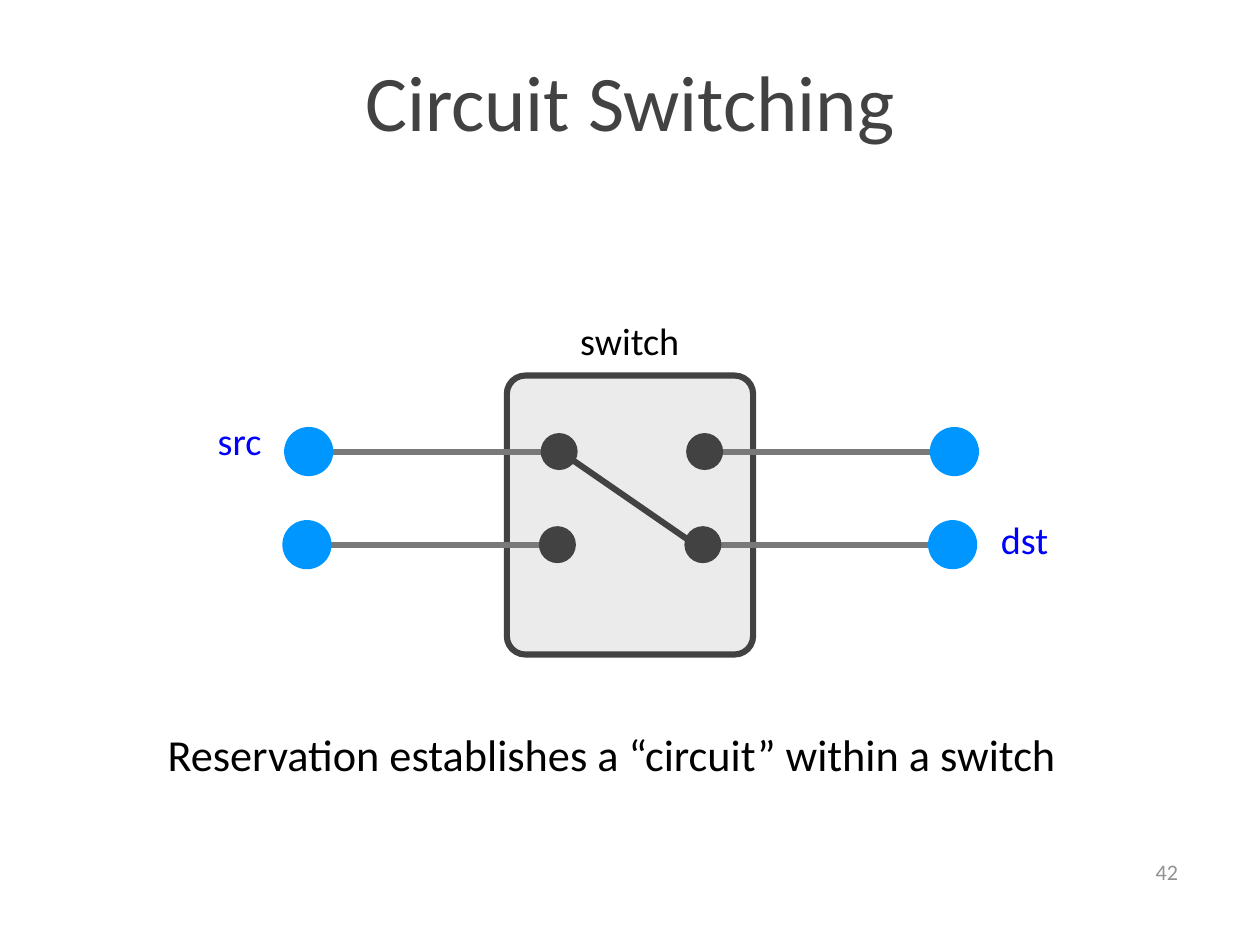
from lxml import etree
from pptx import Presentation
from pptx.dml.color import RGBColor
from pptx.enum.shapes import MSO_CONNECTOR, MSO_SHAPE
from pptx.enum.text import MSO_ANCHOR, PP_ALIGN
from pptx.oxml.ns import qn
from pptx.util import Cm, Pt

STRAIGHT = MSO_CONNECTOR.STRAIGHT
OVAL, ROUND_RECT = MSO_SHAPE.OVAL, MSO_SHAPE.ROUNDED_RECTANGLE
TOP, MIDDLE = MSO_ANCHOR.TOP, MSO_ANCHOR.MIDDLE
CENTER = PP_ALIGN.CENTER

BLACK = RGBColor(0x00, 0x00, 0x00)
DARK = RGBColor(0x42, 0x42, 0x42)
WIRE_GRAY = RGBColor(0x79, 0x79, 0x79)
NUMBER_GRAY = RGBColor(0x91, 0x91, 0x91)
PANEL_GRAY = RGBColor(0xEB, 0xEB, 0xEB)
HOST_BLUE = RGBColor(0x00, 0x96, 0xFF)
LABEL_BLUE = RGBColor(0x00, 0x00, 0xFF)

FONT = "Calibri"
LINE_WIDTH = Pt(5)
HOST_SIZE, PORT_SIZE = 1.41, 1.06
HOST_XS = (8.85, 27.36)
PORT_XS = (16.03, 20.2)
ROWS = ((0, 12.95), (-0.05, 15.62))  # x shift, centre y


def add_text(s, text, x, y, w, h, size, color=BLACK, anchor=MIDDLE, margin=0.15, wrap=False):
    tf = s.shapes.add_textbox(Cm(x), Cm(y), Cm(w), Cm(h)).text_frame
    tf.word_wrap = wrap
    tf.vertical_anchor = anchor
    tf.margin_left = tf.margin_right = tf.margin_top = tf.margin_bottom = Cm(margin)
    p = tf.paragraphs[0]
    p.alignment = CENTER
    r = p.add_run()
    r.text = text
    r.font.name, r.font.size = FONT, Pt(size)
    r.font.color.rgb = color


def add_line(s, x1, y1, x2, y2, color):
    c = s.shapes.add_connector(STRAIGHT, Cm(x1), Cm(y1), Cm(x2), Cm(y2))
    c.line.color.rgb = color
    c.line.width = LINE_WIDTH
    etree.SubElement(c._element.spPr, qn("a:effectLst"))


def add_dot(s, cx, cy, size, color):
    sp = s.shapes.add_shape(OVAL, Cm(cx - size / 2), Cm(cy - size / 2), Cm(size), Cm(size))
    sp.shadow.inherit = False
    sp.fill.solid()
    sp.fill.fore_color.rgb = color
    sp.line.fill.background()


def add_switch_box(s):
    sp = s.shapes.add_shape(ROUND_RECT, Cm(14.53), Cm(10.77), Cm(7.06), Cm(8))
    sp.adjustments[0] = 0.075
    sp.shadow.inherit = False
    sp.fill.solid()
    sp.fill.fore_color.rgb = PANEL_GRAY
    sp.line.color.rgb = DARK
    sp.line.width = LINE_WIDTH


def add_row(s, shift, y):
    """Wire each host to its port, with the wire ends tucked under the dots."""
    for host_x, port_x, side in zip(HOST_XS, PORT_XS, (1, -1)):
        host_x, port_x = host_x + shift, port_x + shift
        add_line(s, host_x + 0.19 * side, y, port_x - 0.4 * side, y, WIRE_GRAY)
        add_dot(s, host_x, y, HOST_SIZE, HOST_BLUE)
        add_dot(s, port_x, y, PORT_SIZE, DARK)


def main():
    prs = Presentation()
    prs.slide_width, prs.slide_height = Cm(36.12), Cm(27.1)
    s = prs.slides.add_slide(prs.slide_layouts[6])

    add_text(s, "Circuit Switching", 1.8, 0.56, 32.51, 4.62, 64, color=DARK, wrap=True)
    add_switch_box(s)
    add_line(s, 16.18, 13.03, 20.19, 15.8, DARK)
    for shift, y in ROWS:
        add_row(s, shift, y)

    add_text(s, "switch", 16.41, 8.92, 3.28, 1.65, 31)
    add_text(s, "src", 6.07, 11.81, 1.6, 1.65, 31, color=LABEL_BLUE)
    add_text(s, "dst", 28.52, 14.63, 1.7, 1.65, 31, color=LABEL_BLUE)
    add_text(s, "Reservation establishes a “circuit” within a switch",
             4.47, 20.7, 26.14, 1.83, 36)
    add_text(s, "42", 33.12, 24.61, 0.66, 0.79, 18, color=NUMBER_GRAY, anchor=TOP, margin=0)
    prs.save("out.pptx")


if __name__ == "__main__":
    main()
